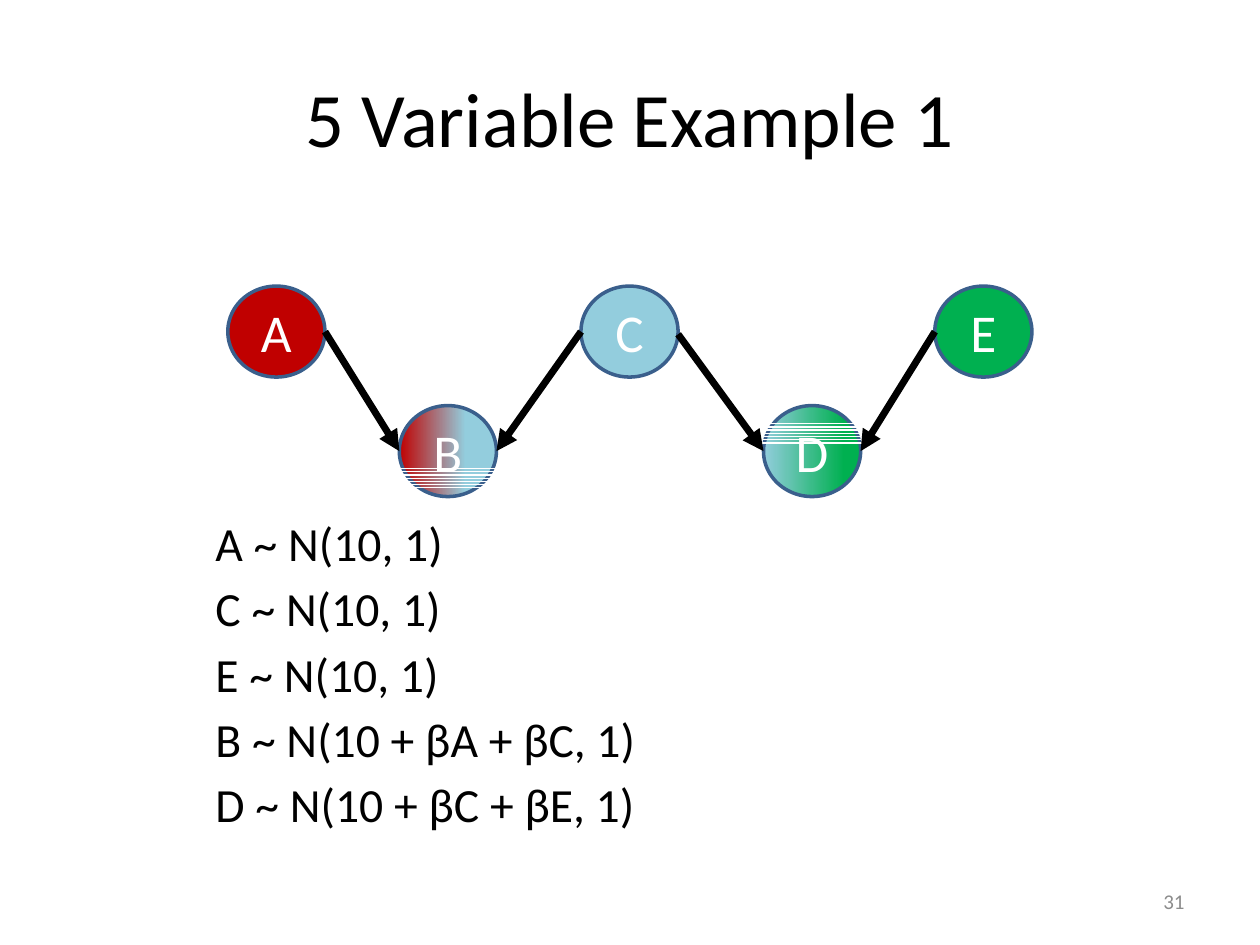
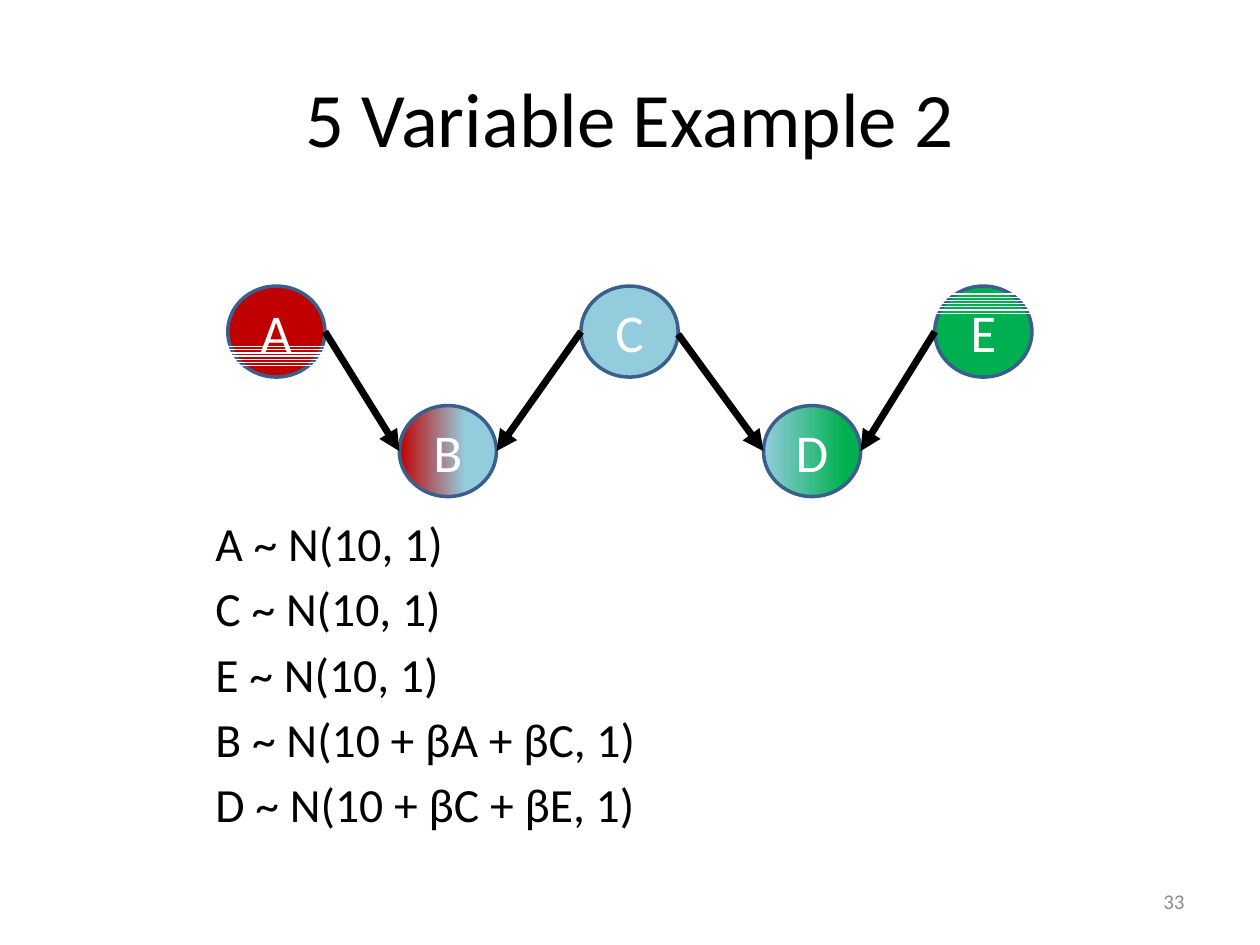
from dataclasses import dataclass

from pptx import Presentation
from pptx.dml.color import RGBColor
from pptx.enum.shapes import MSO_CONNECTOR, MSO_SHAPE
from pptx.enum.text import MSO_ANCHOR, PP_ALIGN
from pptx.oxml.xmlchemy import OxmlElement
from pptx.util import Pt

LEFT, CENTER, RIGHT = PP_ALIGN.LEFT, PP_ALIGN.CENTER, PP_ALIGN.RIGHT
TOP, MIDDLE = MSO_ANCHOR.TOP, MSO_ANCHOR.MIDDLE
OVAL, STRAIGHT = MSO_SHAPE.OVAL, MSO_CONNECTOR.STRAIGHT

FONT = "Calibri"
BLACK = RGBColor(0x00, 0x00, 0x00)
WHITE = RGBColor(0xFF, 0xFF, 0xFF)
GRAY = RGBColor(0x8C, 0x8C, 0x8C)
RED = RGBColor(0xC0, 0x00, 0x00)
LIGHT_BLUE = RGBColor(0x93, 0xCD, 0xDD)
GREEN = RGBColor(0x00, 0xB0, 0x50)
OUTLINE = RGBColor(0x3A, 0x5F, 0x8C)

NODE_WIDTH, NODE_HEIGHT = 55.5, 52
UPPER_ROW, LOWER_ROW = 163.5, 231.8
STRIPE_COUNT, STRIPE_STEP, STRIPE_LENGTH = 7, 1.83, 60.5


@dataclass(frozen=True)
class Node:
    left: float
    top: float
    color: RGBColor
    blend_color: RGBColor | None = None
    blend_end: float = 1.0


@dataclass(frozen=True)
class Edge:
    source: str
    target: str
    start_drop: float = 0


@dataclass(frozen=True)
class Stripes:
    """White lines across a node, offset from its top left corner."""
    node: str
    offset_x: float
    offset_y: float


@dataclass(frozen=True)
class Example:
    title: str
    page_number: str
    stripes: tuple[Stripes, ...]


NODES = {
    "A": Node(130.2, UPPER_ROW, RED),
    "B": Node(228.2, LOWER_ROW, RED, LIGHT_BLUE, 0.68),
    "C": Node(332, UPPER_ROW, LIGHT_BLUE),
    "D": Node(436.3, LOWER_ROW, LIGHT_BLUE, GREEN, 0.83),
    "E": Node(534.2, UPPER_ROW, GREEN),
}
EDGES = (Edge("A", "B"), Edge("C", "B"), Edge("E", "D"), Edge("C", "D", 1.5))
DISTRIBUTIONS = (
    "A ~ N(10, 1)",
    "C ~ N(10, 1)",
    "E ~ N(10, 1)",
    "B ~ N(10 + βA + βC, 1)",
    "D ~ N(10 + βC + βE, 1)",
)
EXAMPLES = (
    Example("5 Variable Example 1", "31",
            (Stripes("B", 0, 36), Stripes("D", -0.7, 10.3))),
    Example("5 Variable Example 2", "33",
            (Stripes("A", -5, 34.5), Stripes("E", -0.7, 4.5))),
)


def write_text(shape, *lines: str, size: float, color: RGBColor = BLACK,
               align=LEFT, anchor=TOP, space_before: float = 0) -> None:
    frame = shape.text_frame
    frame.word_wrap = True
    frame.vertical_anchor = anchor
    frame.text = "\n".join(lines)
    for para in frame.paragraphs:
        para.alignment = align
        para.space_before = Pt(space_before)
        for span in para.runs:
            span.font.name = FONT
            span.font.size = Pt(size)
            span.font.color.rgb = color


def place(shape, left: float, top: float, width: float, height: float) -> None:
    shape.left, shape.top = Pt(left), Pt(top)
    shape.width, shape.height = Pt(width), Pt(height)


def draw_line(shapes, start: tuple[float, float], end: tuple[float, float],
              color: RGBColor, width: float, arrow: bool = False) -> None:
    points = [Pt(value) for value in (*start, *end)]
    connector = shapes.add_connector(STRAIGHT, *points)
    connector.line.color.rgb = color
    connector.line.width = Pt(width)
    if arrow:
        tail = OxmlElement("a:tailEnd")
        tail.set("type", "triangle")
        connector.get_or_add_ln().append(tail)
    connector.element.spPr.append(OxmlElement("a:effectLst"))


def draw_node(page, name: str, node: Node) -> None:
    oval = page.shapes.add_shape(OVAL, Pt(node.left), Pt(node.top),
                                 Pt(NODE_WIDTH), Pt(NODE_HEIGHT))
    oval.shadow.inherit = False
    if node.blend_color is None:
        oval.fill.solid()
        oval.fill.fore_color.rgb = node.color
    else:
        oval.fill.gradient()
        oval.fill.gradient_angle = 0
        first, last = oval.fill.gradient_stops
        first.color.rgb, first.position = node.color, 0
        last.color.rgb, last.position = node.blend_color, node.blend_end
    oval.line.color.rgb = OUTLINE
    oval.line.width = Pt(2)
    write_text(oval, name, size=30.4, color=WHITE, align=CENTER, anchor=MIDDLE)


def draw_stripes(page, stripes: Stripes) -> None:
    group = page.shapes.add_group_shape()
    node = NODES[stripes.node]
    left = node.left + stripes.offset_x
    for index in range(STRIPE_COUNT):
        y = node.top + stripes.offset_y + index * STRIPE_STEP
        draw_line(group.shapes, (left, y), (left + STRIPE_LENGTH, y), WHITE, 0.75)


def draw_edge(page, edge: Edge) -> None:
    """Join the facing sides of two nodes with an arrow."""
    source, target = NODES[edge.source], NODES[edge.target]
    start_x, end_x = source.left, target.left
    if source.left < target.left:
        start_x += NODE_WIDTH
    else:
        end_x += NODE_WIDTH
    middle = NODE_HEIGHT / 2
    draw_line(page.shapes, (start_x, source.top + middle + edge.start_drop),
              (end_x, target.top + middle), BLACK, 4, arrow=True)


def add_text_box(page, left: float, top: float, width: float, height: float):
    return page.shapes.add_textbox(Pt(left), Pt(top), Pt(width), Pt(height))


def build_page(deck, example: Example) -> None:
    page = deck.slides.add_slide(deck.slide_layouts.get_by_name("Title Only"))
    title = page.shapes.title
    place(title, 36, 21.6, 648, 90)
    write_text(title, example.title, size=44, align=CENTER, anchor=MIDDLE)
    for name, node in NODES.items():
        draw_node(page, name, node)
    for stripes in example.stripes:
        draw_stripes(page, stripes)
    for edge in EDGES:
        draw_edge(page, edge)
    model = add_text_box(page, 116, 290, 486, 175)
    write_text(model, *DISTRIBUTIONS, size=27.2, space_before=4.7)
    footer = add_text_box(page, 516, 500.5, 168, 28.75)
    write_text(footer, example.page_number, size=12, color=GRAY,
               align=RIGHT, anchor=MIDDLE)


def main() -> None:
    deck = Presentation()
    deck.slide_width, deck.slide_height = Pt(720), Pt(540)
    for example in EXAMPLES:
        build_page(deck, example)
    deck.save("out.pptx")


if __name__ == "__main__":
    main()
